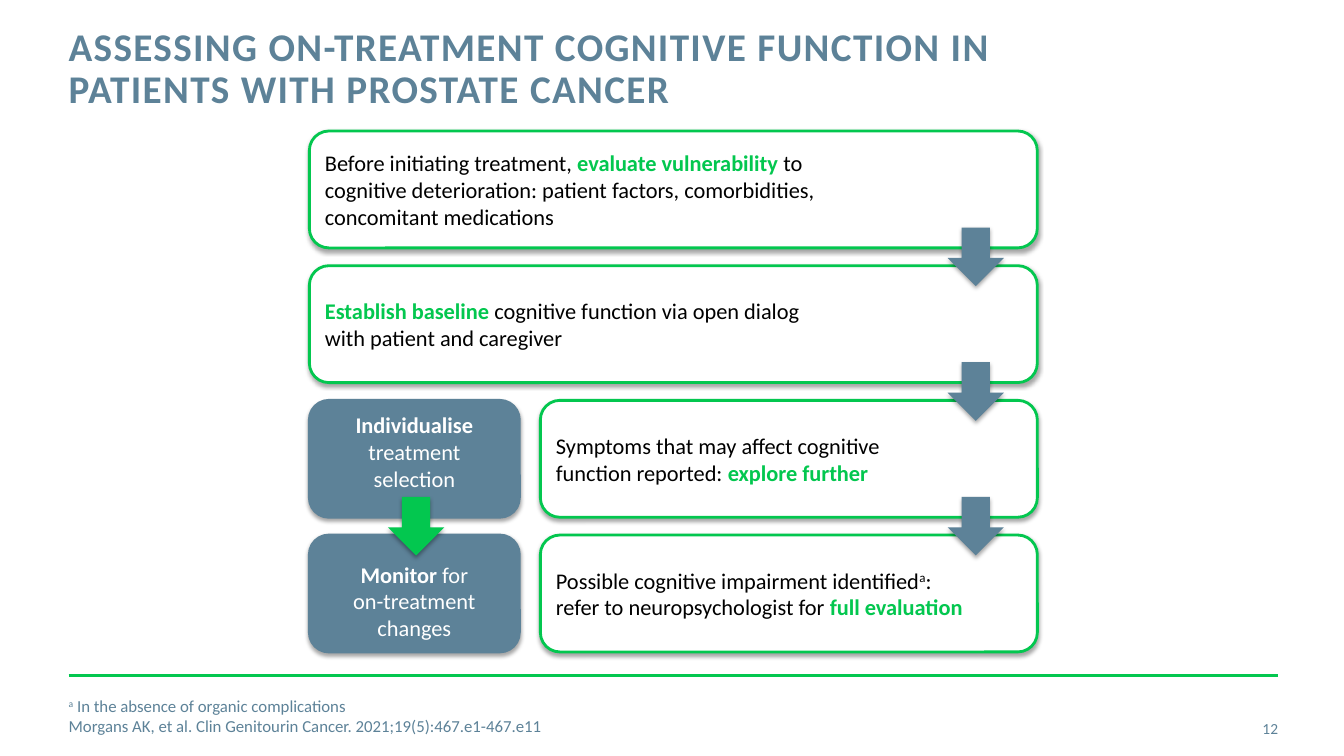
from copy import deepcopy

from lxml import etree
from pptx import Presentation
from pptx.dml.color import RGBColor
from pptx.enum import shapes, text
from pptx.oxml.ns import qn
from pptx.util import Pt

GREEN = RGBColor(0x03, 0xC7, 0x4F)
SLATE = RGBColor(0x5D, 0x82, 0x98)
WHITE = RGBColor(0xFF, 0xFF, 0xFF)
BLACK = RGBColor(0, 0, 0)
FONT = "Calibri"

STEP_HEIGHT = 83.5
STEP_PITCH = 96.2
ACTION_WIDTH = 150
FINDING_OFFSET = 165
ARROW_WIDTH, ARROW_HEIGHT = 40.3, 41.8

PLAIN, STRONG, RAISED = "plain", "strong", "raised"


def place(shape, left, top, width, height):
    shape.left, shape.top = Pt(left), Pt(top)
    shape.width, shape.height = Pt(width), Pt(height)


def clear_margins(frame):
    frame.margin_left = frame.margin_right = 0
    frame.margin_top = frame.margin_bottom = 0
    frame.word_wrap = True
    frame.auto_size = text.MSO_AUTO_SIZE.NONE


def add_run(paragraph, words, size, color, style=PLAIN):
    run = paragraph.add_run()
    run.text = words
    run.font.name = FONT
    run.font.size = Pt(size)
    run.font.bold = style == STRONG
    run.font.color.rgb = color
    if style == RAISED:
        run.font._element.set("baseline", "30000")
    return run


def write_lines(paragraph, lines, color, strong_color):
    for number, line in enumerate(lines):
        if number:
            paragraph.add_line_break()
            paragraph._p[-1].append(deepcopy(run.font._element))
        for words, style in line:
            run = add_run(paragraph, words, 16, strong_color if style == STRONG else color, style)


def add_shadow(shape):
    shape.shadow.inherit = False
    effects = shape._element.spPr.find(qn("a:effectLst"))
    shadow = etree.SubElement(effects, qn("a:outerShdw"), blurRad=str(Pt(3.1)),
                              dist=str(Pt(1.8)), dir="5400000", rotWithShape="0")
    black = etree.SubElement(shadow, qn("a:srgbClr"), val="000000")
    etree.SubElement(black, qn("a:alpha"), val="35000")


def add_step(slide, left, top, width, lines, action=False, anchor=text.MSO_ANCHOR.MIDDLE):
    step = slide.shapes.add_shape(shapes.MSO_SHAPE.ROUNDED_RECTANGLE, Pt(left), Pt(top),
                                  Pt(width), Pt(STEP_HEIGHT))
    step.fill.solid()
    step.fill.fore_color.rgb = SLATE if action else WHITE
    step.line.color.rgb = SLATE if action else GREEN
    step.line.width = Pt(2)
    add_shadow(step)
    step.text_frame.word_wrap = True
    step.text_frame.vertical_anchor = anchor
    paragraph = step.text_frame.paragraphs[0]
    paragraph.alignment = text.PP_ALIGN.CENTER if action else text.PP_ALIGN.LEFT
    write_lines(paragraph, lines, WHITE if action else BLACK, WHITE if action else GREEN)


def add_arrow(slide, center_x, center_y, color):
    arrow = slide.shapes.add_shape(shapes.MSO_SHAPE.DOWN_ARROW,
                                   Pt(center_x - ARROW_WIDTH / 2), Pt(center_y - ARROW_HEIGHT / 2),
                                   Pt(ARROW_WIDTH), Pt(ARROW_HEIGHT))
    arrow.fill.solid()
    arrow.fill.fore_color.rgb = color
    arrow.line.fill.background()
    add_shadow(arrow)


def add_title(slide, left, top, width, height):
    title = slide.shapes.title
    place(title, left, top, width, height)
    clear_margins(title.text_frame)
    title.text_frame.vertical_anchor = text.MSO_ANCHOR.TOP
    heading = title.text_frame.paragraphs[0]
    heading.alignment = text.PP_ALIGN.LEFT
    heading.line_spacing = Pt(30)
    run = add_run(heading, "ASSESSING ON-TREATMENT COGNITIVE FUNCTION IN "
                  "PATIENTS WITH PROSTATE CANCER", 28, SLATE, STRONG)
    run.font._element.set("spc", "100")


def add_pathway(slide, left, top, width):
    tops = [top + row * STEP_PITCH for row in range(4)]
    findings = [
        (0, [[("Before initiating treatment, ", PLAIN), ("evaluate vulnerability ", STRONG),
              ("to", PLAIN)],
             [("cognitive deterioration: patient factors, comorbidities,", PLAIN)],
             [("concomitant medications", PLAIN)]]),
        (0, [[("Establish baseline ", STRONG), ("cognitive function via open dialog", PLAIN)],
             [("with patient and caregiver", PLAIN)]]),
        (FINDING_OFFSET, [[("Symptoms that may affect cognitive", PLAIN)],
                          [("function reported: ", PLAIN), ("explore further", STRONG)]]),
        (FINDING_OFFSET, [[("Possible cognitive impairment identified", PLAIN), ("a", RAISED),
                           (":", PLAIN)],
                          [("refer to neuropsychologist for ", PLAIN),
                           ("full evaluation", STRONG)]]),
    ]
    for row_top, (offset, lines) in zip(tops, findings):
        add_step(slide, left + offset, row_top, width - offset, lines)

    individualise = [[("Individualise", STRONG)], [("treatment", PLAIN)], [("selection", PLAIN)]]
    monitor = [[("Monitor", STRONG), (" for", PLAIN)], [("on-treatment", PLAIN)],
               [("changes", PLAIN)]]
    add_step(slide, left, tops[2], ACTION_WIDTH, individualise, True, text.MSO_ANCHOR.TOP)
    add_step(slide, left, tops[3], ACTION_WIDTH, monitor, True, text.MSO_ANCHOR.BOTTOM)

    gap_centers = [(above + STEP_HEIGHT + below) / 2 for above, below in zip(tops, tops[1:])]
    for gap_center in gap_centers:
        add_arrow(slide, left + width - 44, gap_center, SLATE)
    add_arrow(slide, left + ACTION_WIDTH / 2 + 1.2, gap_centers[-1], GREEN)


def add_footer(slide, left, top, width):
    rule = slide.shapes.add_connector(shapes.MSO_CONNECTOR.STRAIGHT, Pt(left), Pt(top),
                                      Pt(left + width), Pt(top))
    rule.line.color.rgb = GREEN
    rule.line.width = Pt(2)
    etree.SubElement(rule._element.spPr, qn("a:effectLst"))

    footnotes = slide.placeholders[1]
    place(footnotes, left, top + 14.4, 639.4, 28.8)
    clear_margins(footnotes.text_frame)
    footnotes.text_frame.vertical_anchor = text.MSO_ANCHOR.MIDDLE
    notes = [
        [("a", RAISED), (" In the absence of organic complications", PLAIN)],
        [("Morgans AK, et al. Clin Genitourin Cancer. 2021;19(5):467.e1-467.e11", PLAIN)],
    ]
    for number, note in enumerate(notes):
        frame = footnotes.text_frame
        paragraph = frame.add_paragraph() if number else frame.paragraphs[0]
        properties = paragraph._p.get_or_add_pPr()
        properties.set("marL", "0")
        properties.set("indent", "0")
        etree.SubElement(properties, qn("a:buNone"))
        paragraph.space_before = Pt(0)
        for words, style in note:
            add_run(paragraph, words, 12, SLATE, style)

    number_width = 62
    page = slide.shapes.add_textbox(Pt(left + width - number_width), Pt(top + 23.8),
                                    Pt(number_width), Pt(28.8))
    clear_margins(page.text_frame)
    page.text_frame.vertical_anchor = text.MSO_ANCHOR.MIDDLE
    page_number = page.text_frame.paragraphs[0]
    page_number.alignment = text.PP_ALIGN.RIGHT
    add_run(page_number, "12", 11, SLATE)


def main():
    deck = Presentation()
    deck.slide_width, deck.slide_height = Pt(960), Pt(540)
    slide = deck.slides.add_slide(deck.slide_layouts[1])
    add_title(slide, 49, 19.4, 688.3, 63.4)
    add_pathway(slide, 221, 93.6, 520)
    add_footer(slide, 49, 482.4, 864)
    deck.save("out.pptx")


if __name__ == "__main__":
    main()
